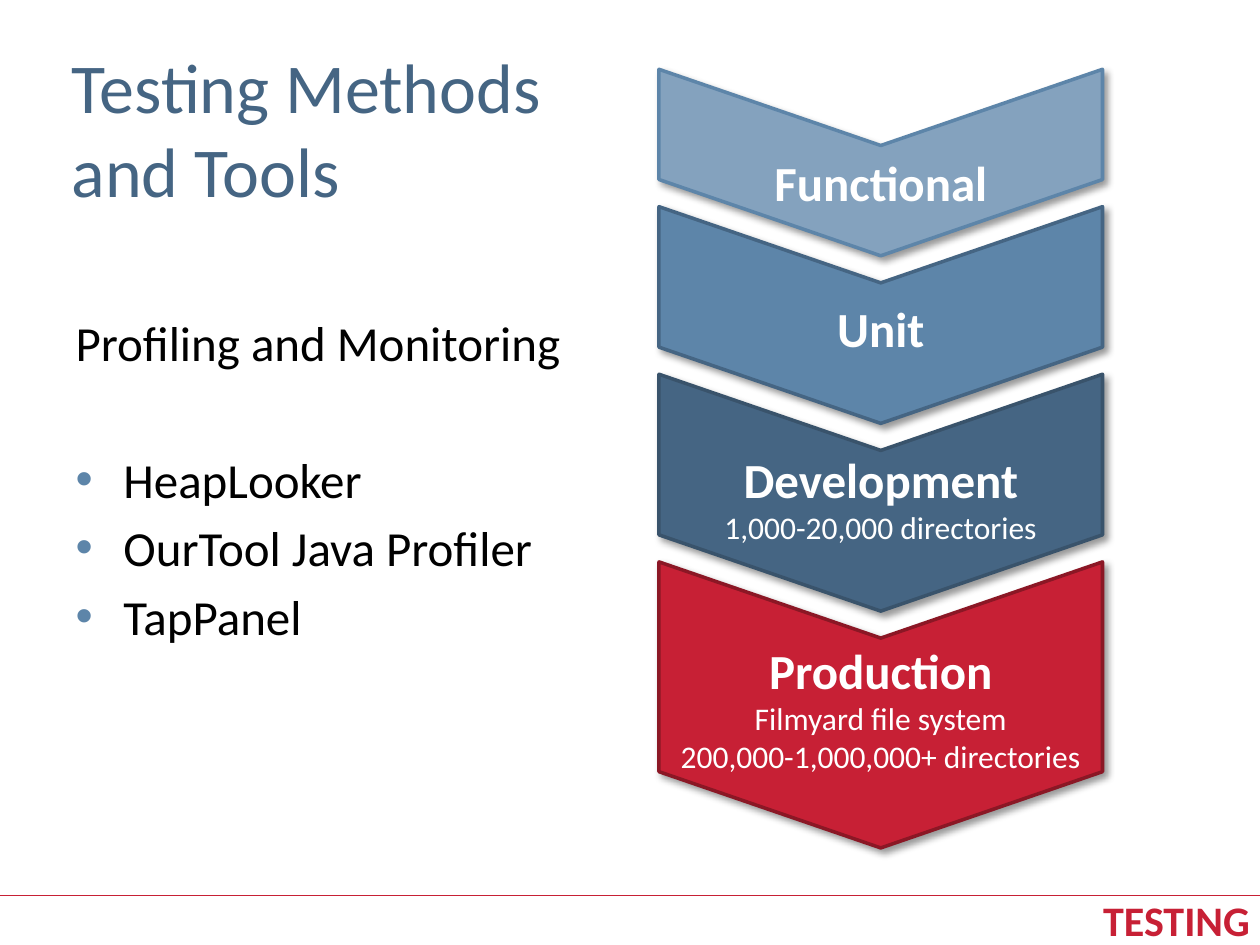
import dataclasses

import pptx
import pptx.dml.color
import pptx.enum.shapes
import pptx.enum.text
import pptx.oxml
import pptx.oxml.ns
import pptx.util

COLUMNS, ROWS = 100, 75
ALIGN = pptx.enum.text.PP_ALIGN
ANCHOR = pptx.enum.text.MSO_ANCHOR
FIT = pptx.enum.text.MSO_AUTO_SIZE


@dataclasses.dataclass(frozen=True)
class Theme:
    font: str = "Calibri"
    white: str = "FFFFFF"
    black: str = "000000"
    pale: str = "84A2BE"
    blue: str = "5D85A9"
    navy: str = "456583"
    deep: str = "39536B"
    red: str = "C72035"
    maroon: str = "8B1725"
    title_size: int = 40
    body_size: int = 28
    footer_size: int = 24
    detail_size: int = 18


@dataclasses.dataclass(frozen=True)
class Stage:
    name: str
    details: tuple[str, ...]
    rows: float
    inset: float
    fill: str
    outline: str


THEME = Theme()
STAGES = (
    Stage("Functional", (), 14.8, 3.1, THEME.pale, THEME.blue),
    Stage("Unit", (), 17.2, 2, THEME.blue, THEME.navy),
    Stage("Development", ("1,000-20,000 directories",), 18.8, 0.8, THEME.navy, THEME.deep),
    Stage("Production", ("Filmyard file system", "200,000-1,000,000+ directories"),
          22.7, 0.4, THEME.red, THEME.maroon),
)
STAGE_TOP, STAGE_CENTER, STAGE_COLUMNS = 5.5, 69.9, 35.2
TIP_ROWS, OVERLAP_ROWS = 6.05, 3.9
PROFILERS = ("HeapLooker", "OurTool Java Profiler", "TapPanel")
INDENT = 3.8


def grid(cells: float) -> pptx.util.Emu:
    """Length of square grid cells, COLUMNS of which span the ten-inch slide."""
    return pptx.util.Inches(10 * cells / COLUMNS)


def rgb(color: str) -> pptx.dml.color.RGBColor:
    return pptx.dml.color.RGBColor.from_string(color)


def add_xml(parent, xml: str) -> None:
    head, tail = xml.split(" ", 1)
    parent.append(pptx.oxml.parse_xml(f"{head} {pptx.oxml.ns.nsdecls('a')} {tail}"))


def place(shape, left: float, top: float, width: float, height: float) -> None:
    shape.left, shape.top = grid(left), grid(top)
    shape.width, shape.height = grid(width), grid(height)


def set_insets(frame, left: float, top: float, right: float, bottom: float) -> None:
    frame.margin_left, frame.margin_top = grid(left), grid(top)
    frame.margin_right, frame.margin_bottom = grid(right), grid(bottom)


def write(frame, text: str, *, size: float, color: str, bold: bool = False,
          align=ALIGN.LEFT, before: float = 0):
    """Fill the frame's empty first paragraph, or append one, and return it."""
    paragraph = frame.paragraphs[-1]
    if paragraph.text:
        paragraph = frame.add_paragraph()
    paragraph.text = text
    paragraph.alignment = align
    paragraph.space_before = pptx.util.Pt(before)
    for run in paragraph.runs:
        run.font.name, run.font.size = THEME.font, pptx.util.Pt(size)
        run.font.bold, run.font.color.rgb = bold, rgb(color)
    return paragraph


def hang(paragraph, bullet: bool) -> None:
    """Give the paragraph a hanging indent, with or without a bullet."""
    properties = paragraph._p.get_or_add_pPr()
    properties.set("marL", str(grid(INDENT)))
    properties.set("indent", str(-grid(INDENT)))
    if bullet:
        add_xml(properties, f'<a:buClr ><a:srgbClr val="{THEME.blue}"/></a:buClr>')
        add_xml(properties, '<a:buChar char="•"/>')
    else:
        add_xml(properties, "<a:buNone />")


def fill_title(title) -> None:
    place(title, 4.7, 3.9, 90, 12.5)
    title.text_frame.auto_size = FIT.NONE
    title.text_frame.vertical_anchor = ANCHOR.MIDDLE
    write(title.text_frame, "Testing Methods\vand Tools", size=THEME.title_size, color=THEME.navy)


def fill_body(body) -> None:
    place(body, 5, 17.5, 46.6, 49.5)
    frame = body.text_frame
    frame.auto_size = FIT.NONE
    set_insets(frame, 1, 7.3, 1, 0.5)
    style = {"size": THEME.body_size, "color": THEME.black}
    hang(write(frame, "Profiling and Monitoring", **style), bullet=False)
    for index, profiler in enumerate(PROFILERS):
        hang(write(frame, profiler, before=5.5 if index else 44.5, **style), bullet=True)


def draw_stage(slide, stage: Stage, top: float) -> None:
    """Draw a chevron that is turned to point down, with upright text."""
    chevron = slide.shapes.add_shape(
        pptx.enum.shapes.MSO_SHAPE.CHEVRON,
        grid(STAGE_CENTER - stage.rows / 2), grid(top + (stage.rows - STAGE_COLUMNS) / 2),
        grid(stage.rows), grid(STAGE_COLUMNS))
    chevron.rotation = 90
    chevron.adjustments[0] = TIP_ROWS / stage.rows
    chevron.fill.solid()
    chevron.fill.fore_color.rgb = rgb(stage.fill)
    chevron.line.color.rgb = rgb(stage.outline)
    chevron.line.width = pptx.util.Pt(2)
    chevron.shadow.inherit = False
    add_xml(chevron._element.spPr.find(pptx.oxml.ns.qn("a:effectLst")),
            f'<a:outerShdw blurRad="{pptx.util.Pt(4)}" dist="{pptx.util.Pt(3)}" dir="2700000" '
            f'rotWithShape="0"><a:srgbClr val="{THEME.black}"><a:alpha val="40000"/>'
            '</a:srgbClr></a:outerShdw>')

    frame = chevron.text_frame
    frame.word_wrap = True
    frame.vertical_anchor = ANCHOR.MIDDLE
    set_insets(frame, stage.inset, 0, 0, 0)
    frame._txBody.bodyPr.set("vert", "vert270")
    style = {"color": THEME.white, "align": ALIGN.CENTER}
    write(frame, stage.name, size=THEME.body_size, bold=True, **style)
    for detail in stage.details:
        write(frame, detail, size=THEME.detail_size, **style)


def draw_footer(slide) -> None:
    rule = slide.shapes.add_connector(
        pptx.enum.shapes.MSO_CONNECTOR.STRAIGHT, 0, grid(71.1), grid(COLUMNS), grid(71.1))
    rule.line.color.rgb = rgb(THEME.red)
    rule.line.width = pptx.util.Pt(0.75)
    add_xml(rule._element.spPr, "<a:effectLst />")
    section = slide.shapes.add_textbox(grid(33.6), grid(71), grid(66.4), grid(4))
    frame = section.text_frame
    frame.word_wrap = True
    frame.auto_size = FIT.SHAPE_TO_FIT_TEXT
    set_insets(frame, 1, 0, 0.8, 0)
    write(frame, "TESTING", size=THEME.footer_size, color=THEME.red, bold=True, align=ALIGN.RIGHT)


def main() -> None:
    deck = pptx.Presentation()
    deck.slide_width, deck.slide_height = grid(COLUMNS), grid(ROWS)
    slide = deck.slides.add_slide(deck.slide_layouts[1])
    fill_title(slide.shapes.title)
    fill_body(slide.placeholders[1])
    top = STAGE_TOP
    for stage in STAGES:
        draw_stage(slide, stage, top)
        top += stage.rows - OVERLAP_ROWS
    draw_footer(slide)
    deck.save("out.pptx")


if __name__ == "__main__":
    main()
